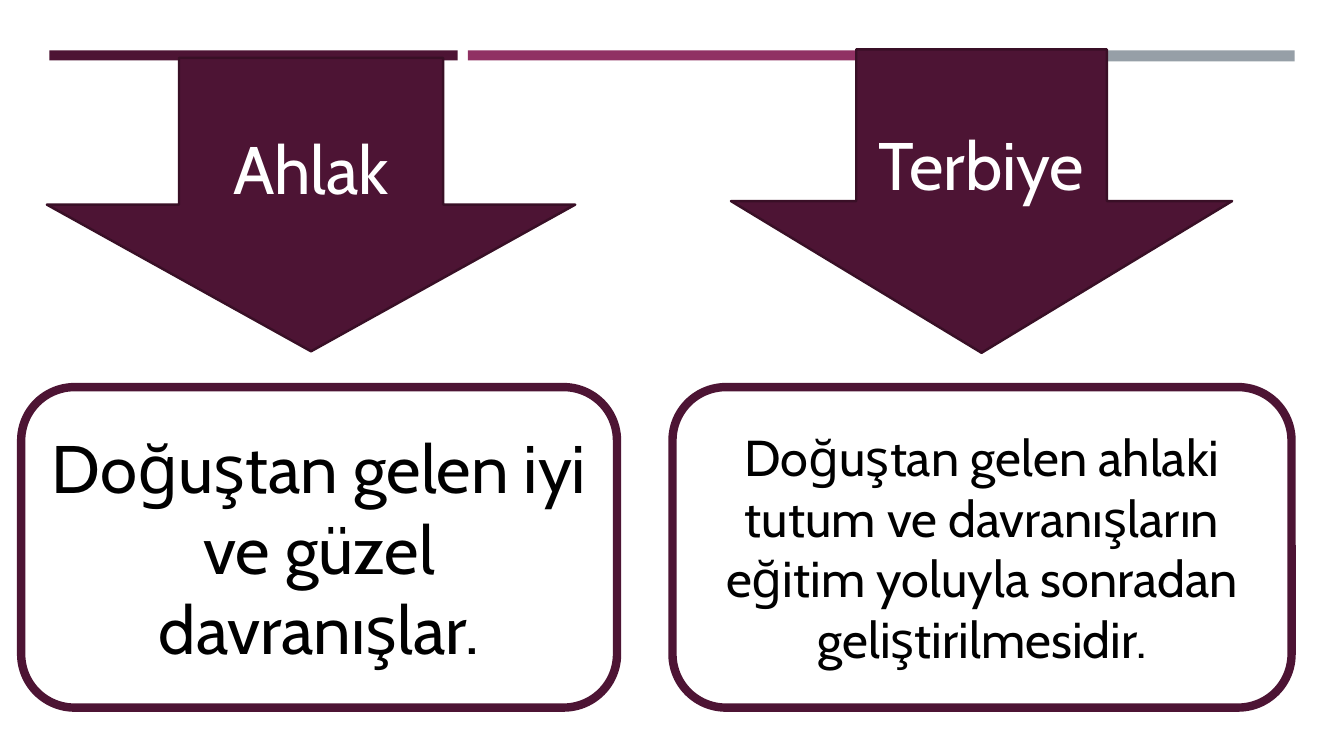
from pptx import Presentation
from pptx.dml.color import RGBColor
from pptx.enum.shapes import MSO_SHAPE
from pptx.enum.text import MSO_ANCHOR, PP_ALIGN
from pptx.util import Inches, Pt

COLORS = {
    "plum": "4D1434",
    "outline": "390F26",
    "berry": "903163",
    "grey": "969FA7",
    "white": "FFFFFF",
    "black": "000000",
}


class ConceptSlide:
    """Holds the style and the slide, and draws each kind of element."""

    font_name = "Cabin"

    def __init__(self, slide):
        self.slide = slide

    def color(self, name):
        return RGBColor.from_string(COLORS[name])

    def block(self, preset, bounds, fill, line=None, width=0):
        block = self.slide.shapes.add_shape(preset, *map(Inches, bounds))
        block.shadow.inherit = False
        block.fill.solid()
        block.fill.fore_color.rgb = self.color(fill)
        if line:
            block.line.color.rgb = self.color(line)
            block.line.width = Pt(width)
        else:
            block.line.fill.background()
        return block

    def label(self, block, wording, size, color):
        frame = block.text_frame
        paragraph = frame.paragraphs[0]
        run = paragraph.add_run()
        formats = (
            (frame, {"word_wrap": True, "vertical_anchor": MSO_ANCHOR.MIDDLE}),
            (paragraph, {"alignment": PP_ALIGN.CENTER}),
            (run, {"text": wording}),
            (run.font, {"name": self.font_name, "size": Pt(size)}),
            (run.font.color, {"rgb": self.color(color)}),
        )
        for target, values in formats:
            for attribute, value in values.items():
                setattr(target, attribute, value)

    def bar(self, left, height, fill):
        self.block(MSO_SHAPE.RECTANGLE, (left, 0.5, 4.05, height), fill)

    def arrow(self, term, bounds):
        arrow = self.block(MSO_SHAPE.RIGHT_ARROW, bounds, "plum", "outline", 1.75)
        arrow.rotation = 90
        self.label(arrow, term, 48, "white")
        arrow.element.txBody.bodyPr.set("vert", "vert270")

    def card(self, meaning, left, width, size):
        card = self.block(MSO_SHAPE.ROUNDED_RECTANGLE, (left, 3.84, width, 3.18),
                          "white", "plum", 6)
        self.label(card, meaning, size, "black")


def main():
    presentation = Presentation()
    presentation.slide_width = Inches(13.33)
    presentation.slide_height = Inches(7.5)
    blank_layout = presentation.slide_layouts[6]
    concepts = ConceptSlide(presentation.slides.add_slide(blank_layout))

    bars = (("plum", 0.1), ("berry", 0.1), ("grey", 0.11))
    for position, (fill, height) in enumerate(bars):
        concepts.bar(0.49 + 4.15 * position, height, fill)

    concepts.arrow("Ahlak", (1.63, -0.59, 2.91, 5.24))
    concepts.card("Doğuştan gelen iyi ve güzel davranışlar.", 0.21, 5.91, 48)
    concepts.arrow("Terbiye", (8.23, -0.49, 3.01, 4.97))
    concepts.card(
        "Doğuştan gelen ahlaki tutum ve davranışların eğitim yoluyla "
        "sonradan geliştirilmesidir.", 6.67, 6.14, 36)

    presentation.save("out.pptx")


if __name__ == "__main__":
    main()
